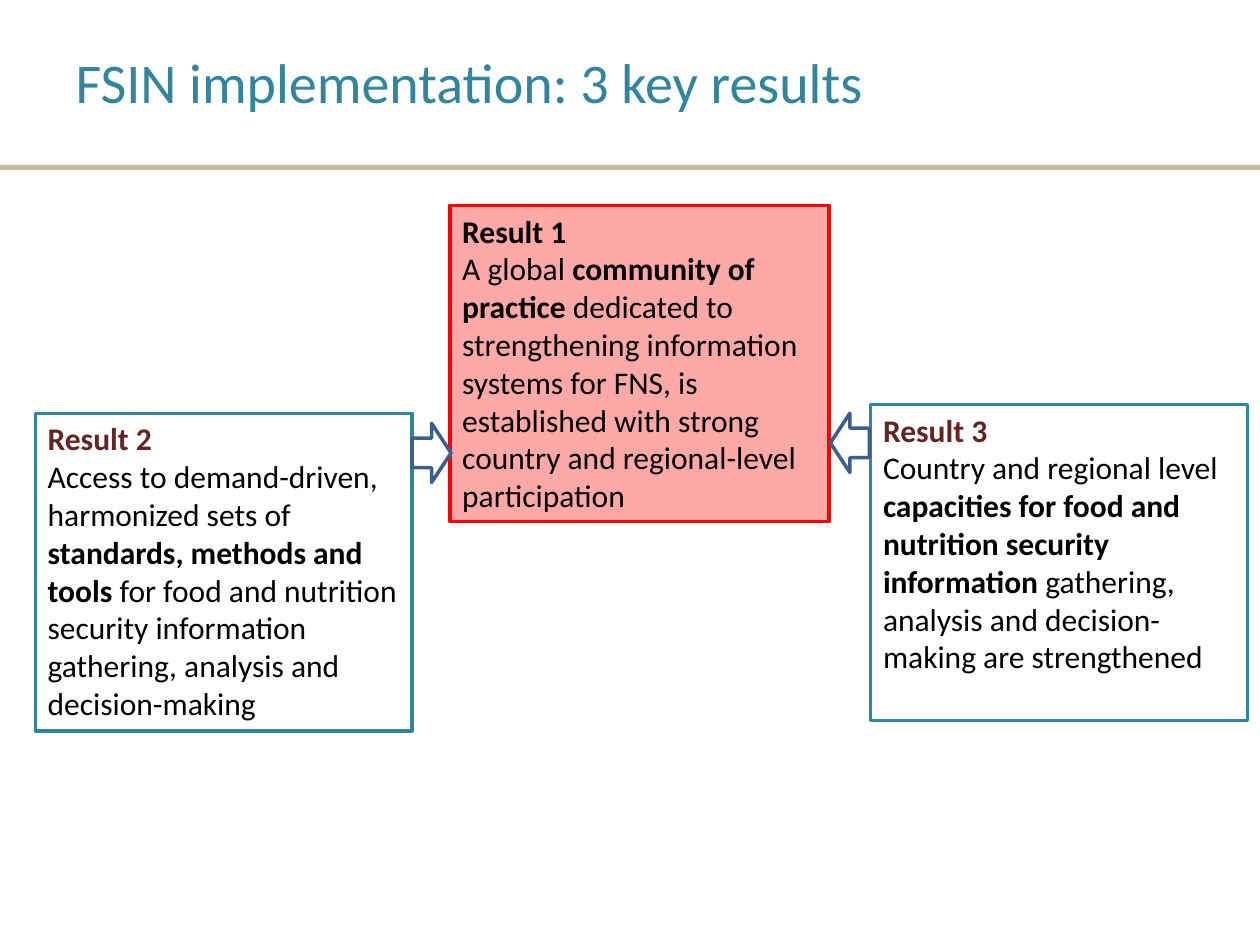
from lxml import etree
from pptx import Presentation
from pptx.dml.color import RGBColor
from pptx.enum import shapes, text
from pptx.oxml import ns
from pptx.util import Inches, Pt

TEAL = RGBColor(0x31, 0x85, 0x9C)
SAND = RGBColor(0xC4, 0xBD, 0x97)
MAROON = RGBColor(0x63, 0x25, 0x23)
RED = RGBColor(0xFF, 0x00, 0x00)
NAVY = RGBColor(0x3A, 0x5F, 0x8C)
WHITE = RGBColor(0xFF, 0xFF, 0xFF)
BLACK = RGBColor(0x00, 0x00, 0x00)

RESULTS = [
    ((0.28, 3.28, 2.99, 2.52), "Result 2", MAROON, WHITE, TEAL, None, [
        ("Access to demand-driven, harmonized sets of ", False),
        ("standards, methods and tools ", True),
        ("for food and nutrition security information gathering, "
         "analysis and decision-making", False)]),
    ((6.91, 3.21, 2.99, 2.51), "Result 3", MAROON, WHITE, TEAL, None, [
        ("Country and regional level ", False),
        ("capacities for food and nutrition security information ", True),
        ("gathering, analysis and decision-making are strengthened", False)]),
    ((3.57, 1.63, 3.01, 2.51), "Result 1", BLACK, RED, RED, 34, [
        ("A global ", False),
        ("community of practice ", True),
        ("dedicated to strengthening information systems for FNS, is "
         "established with strong country and regional-level participation", False)]),
]


def format_font(font, color, size, bold=False):
    for name, value in {"name": "Calibri", "size": Pt(size), "bold": bold}.items():
        setattr(font, name, value)
    font.color.rgb = color


def add_block(slide, preset, box, fill, line=None):
    block = slide.shapes.add_shape(preset, *map(Inches, box))
    block.shadow.inherit = False
    block.fill.solid()
    block.fill.fore_color.rgb = fill
    if line is None:
        block.line.fill.background()
    else:
        block.line.color.rgb = line
        block.line.width = Pt(2)
    return block


def set_opacity(block, percent):
    color = block.fill._xPr.find(ns.qn("a:solidFill"))[0]
    etree.SubElement(color, ns.qn("a:alpha"), val=str(percent * 1000))


def add_title(slide, wording):
    title = slide.shapes.title
    place = {"left": 0.5, "top": 0.13, "width": 7.26, "height": 1.02}
    for name, value in place.items():
        setattr(title, name, Inches(value))
    frame = title.text_frame
    frame.text = wording
    frame.vertical_anchor = text.MSO_ANCHOR.MIDDLE
    frame.paragraphs[0].alignment = text.PP_ALIGN.LEFT
    format_font(frame.paragraphs[0].runs[0].font, TEAL, 32)


def add_result(slide, box, heading, heading_color, fill, line, opacity, body):
    result = add_block(slide, shapes.MSO_SHAPE.RECTANGLE, box, fill, line)
    if opacity is not None:
        set_opacity(result, opacity)
    frame = result.text_frame
    frame.word_wrap = True
    frame.vertical_anchor = text.MSO_ANCHOR.TOP
    lines = [(frame.paragraphs[0], [(heading, True)], heading_color),
             (frame.add_paragraph(), body, BLACK)]
    for paragraph, parts, color in lines:
        paragraph.alignment = text.PP_ALIGN.LEFT
        for wording, bold in parts:
            run = paragraph.add_run()
            run.text = wording
            format_font(run.font, color, 18, bold)


def add_arrow(slide, left, top, rotation):
    arrow = add_block(slide, shapes.MSO_SHAPE.RIGHT_ARROW,
                      (left, top, 0.31, 0.47), WHITE, NAVY)
    arrow.rotation = rotation


def main():
    deck = Presentation()
    deck.slide_width, deck.slide_height = Inches(10), Inches(7.5)
    slide = deck.slides.add_slide(deck.slide_layouts[5])
    add_block(slide, shapes.MSO_SHAPE.RECTANGLE, (0, 1.31, 10, 0.04), SAND)
    add_title(slide, "FSIN implementation: 3 key results")
    for result in RESULTS:
        add_result(slide, *result)
    add_arrow(slide, 3.27, 3.36, 0)
    add_arrow(slide, 6.59, 3.28, 180)
    deck.save("out.pptx")


if __name__ == "__main__":
    main()
